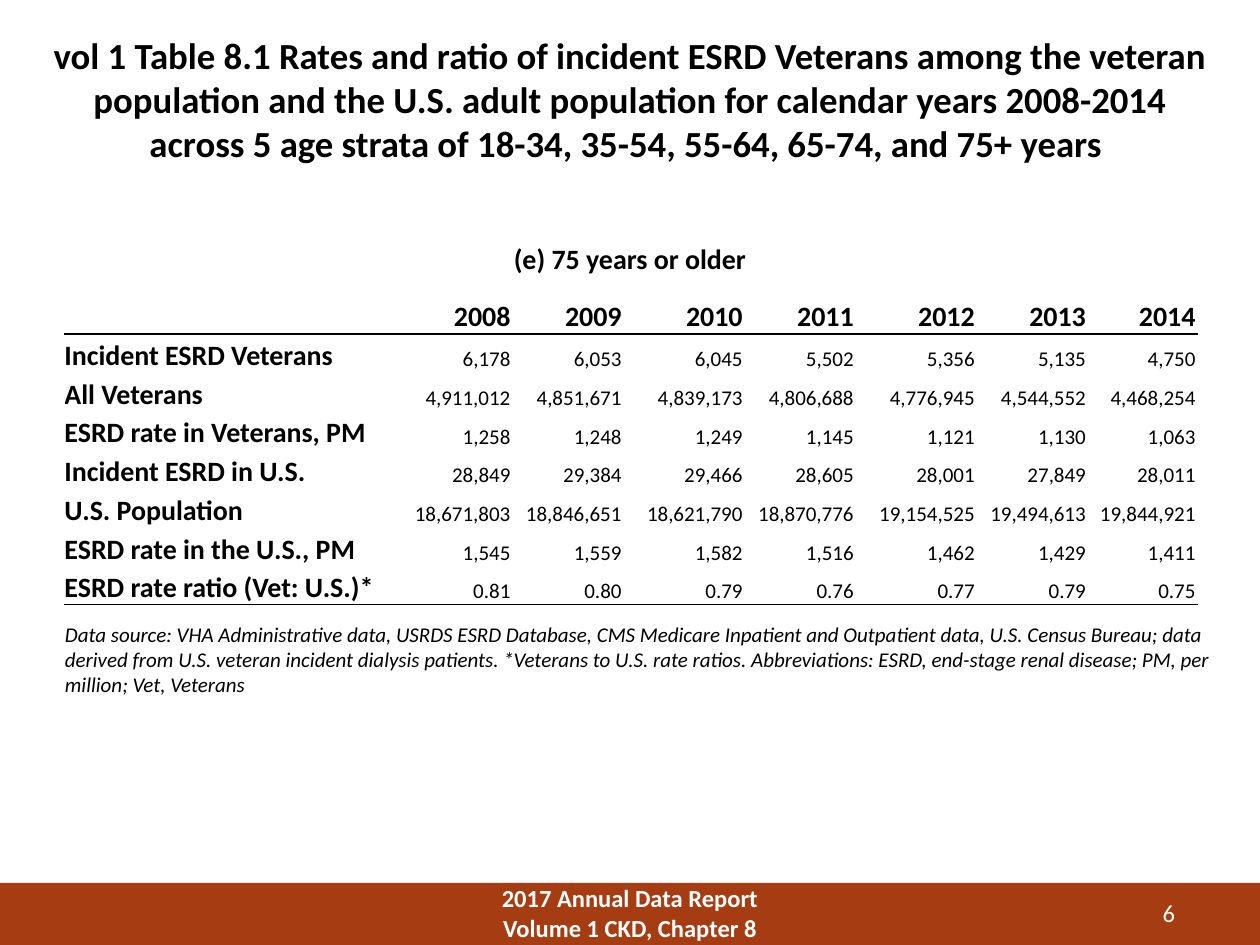
from lxml import etree
from pptx import Presentation
from pptx import util as u
from pptx.dml import color
from pptx.enum import shapes, text
from pptx.oxml import ns

BLACK, WHITE, RUST = "000000", "FFFFFF", "A63C12"
LEFT, CENTER, RIGHT = text.PP_ALIGN.LEFT, text.PP_ALIGN.CENTER, text.PP_ALIGN.RIGHT
TITLE = ("vol 1 Table 8.1 Rates and ratio of incident ESRD Veterans among the veteran "
         "population and the U.S. adult population for calendar years 2008-2014 "
         "across 5 age strata of 18-34, 35-54, 55-64, 65-74, and 75+ years ")
SOURCE = ("Data source: VHA Administrative data, USRDS ESRD Database, CMS Medicare "
          "Inpatient and Outpatient data, U.S. Census Bureau; data derived from U.S. "
          "veteran incident dialysis patients. *Veterans to U.S. rate ratios. "
          "Abbreviations: ESRD, end-stage renal disease; PM, per million; Vet, Veterans")
COLUMNS = [6.38, 2.64, 2.24, 2.44, 2.24, 2.44, 2.24, 2.21]
ROWS = [
    ["", "2008", "2009", "2010", "2011", "2012", "2013", "2014"],
    ["Incident ESRD Veterans", "6,178", "6,053", "6,045", "5,502", "5,356", "5,135", "4,750"],
    ["All Veterans", "4,911,012", "4,851,671", "4,839,173", "4,806,688", "4,776,945",
     "4,544,552", "4,468,254"],
    ["ESRD rate in Veterans, PM", "1,258", "1,248", "1,249", "1,145", "1,121", "1,130", "1,063"],
    ["Incident ESRD in U.S.", "28,849", "29,384", "29,466", "28,605", "28,001", "27,849",
     "28,011"],
    ["U.S. Population", "18,671,803", "18,846,651", "18,621,790", "18,870,776", "19,154,525",
     "19,494,613", "19,844,921"],
    ["ESRD rate in the U.S., PM", "1,545", "1,559", "1,582", "1,516", "1,462", "1,429", "1,411"],
    ["ESRD rate ratio (Vet: U.S.)*", "0.81", "0.80", "0.79", "0.76", "0.77", "0.79", "0.75"],
]


def rgb(value):
    return color.RGBColor.from_string(value)


class Deck:
    """Holds the style and the current slide, and draws each kind of element."""

    def __init__(self, font="Calibri"):
        self.font = font
        self.prs = Presentation()
        self.prs.slide_width, self.prs.slide_height = u.Cm(25.4), u.Cm(19.05)
        self.s = self.prs.slides.add_slide(self.prs.slide_layouts[5])

    def run(self, p, words, size, fill=BLACK, align=LEFT, bold=False, italic=False):
        p.alignment = align
        r = p.add_run()
        r.text = words
        r.font.name, r.font.size = self.font, u.Pt(size)
        r.font.bold, r.font.italic = bold, italic
        r.font.color.rgb = rgb(fill)

    def title(self, box, words, size):
        sp = self.s.shapes.title
        sp.left, sp.top, sp.width, sp.height = map(u.Cm, box)
        tf = sp.text_frame
        tf.word_wrap, tf.auto_size = True, text.MSO_AUTO_SIZE.NONE
        tf.vertical_anchor = text.MSO_ANCHOR.TOP
        p = tf.paragraphs[0]
        p.space_before, p.space_after = u.Pt(0), u.Pt(6)
        self.run(p, words, size, align=CENTER, bold=True)

    def band(self, box, fill):
        sp = self.s.shapes.add_shape(shapes.MSO_SHAPE.RECTANGLE, *map(u.Cm, box))
        sp.shadow.inherit = False
        sp.fill.solid()
        sp.fill.fore_color.rgb = rgb(fill)
        sp.line.fill.background()

    def text(self, box, lines, size, wrap=True, **style):
        tf = self.s.shapes.add_textbox(*map(u.Cm, box)).text_frame
        tf.word_wrap = wrap
        for i, line in enumerate(lines):
            p = tf.add_paragraph() if i else tf.paragraphs[0]
            self.run(p, line, size, **style)

    def rule(self, cell, side):
        ln = etree.Element(ns.qn("a:ln" + side), w=str(u.Pt(1)))
        fill = etree.SubElement(ln, ns.qn("a:solidFill"))
        etree.SubElement(fill, ns.qn("a:srgbClr"), val=BLACK)
        cell._tc.get_or_add_tcPr().insert(0, ln)

    def table(self, left, top, widths, height, rows):
        box = map(u.Cm, (left, top, sum(widths), height * len(rows)))
        table = self.s.shapes.add_table(len(rows), len(widths), *box).table
        table.first_row = table.horz_banding = False
        for column, width in zip(table.columns, widths):
            column.width = u.Cm(width)
        for i, values in enumerate(rows):
            table.rows[i].height = u.Cm(height)
            for j, value in enumerate(values):
                self.cell(table.cell(i, j), value, header=i == 0, label=j == 0)
                if i in (0, len(rows) - 1):
                    self.rule(table.cell(i, j), "B")
                elif i == 1:
                    self.rule(table.cell(i, j), "T")

    def cell(self, cell, value, header, label):
        strong = header or label
        cell.fill.background()
        cell.margin_left = cell.margin_right = cell.margin_top = u.Cm(0 if label else 0.03)
        cell.margin_bottom = 0
        cell.vertical_anchor = text.MSO_ANCHOR.MIDDLE if strong else text.MSO_ANCHOR.BOTTOM
        if value:
            p = cell.text_frame.paragraphs[0]
            p.line_spacing = 1.15
            self.run(p, value, 16 if strong else 12, align=LEFT if label else RIGHT,
                     bold=strong)


def main():
    deck = Deck()
    deck.band((0, 17.8, 25.4, 1.25), RUST)
    deck.text((9.1, 17.68, 7.2, 1.37), ["2017 Annual Data Report", "Volume 1 CKD, Chapter 8"],
              14, fill=WHITE, align=CENTER, bold=True)
    deck.text((21.4, 17.98, 2.54, 0.76), ["6"], 14, fill=WHITE, align=RIGHT)
    deck.title((0.7, 0.53, 24, 3.15), TITLE, 21)
    deck.text((10.06, 4.75, 5.28, 0.94), ["(e) 75 years or older"], 16, wrap=False,
              align=CENTER, bold=True)
    deck.text((1.06, 12.4, 24, 1.8), [SOURCE], 12, italic=True)
    deck.table(1.3, 5.92, COLUMNS, 0.78, ROWS)
    deck.prs.save("out.pptx")


if __name__ == "__main__":
    main()
